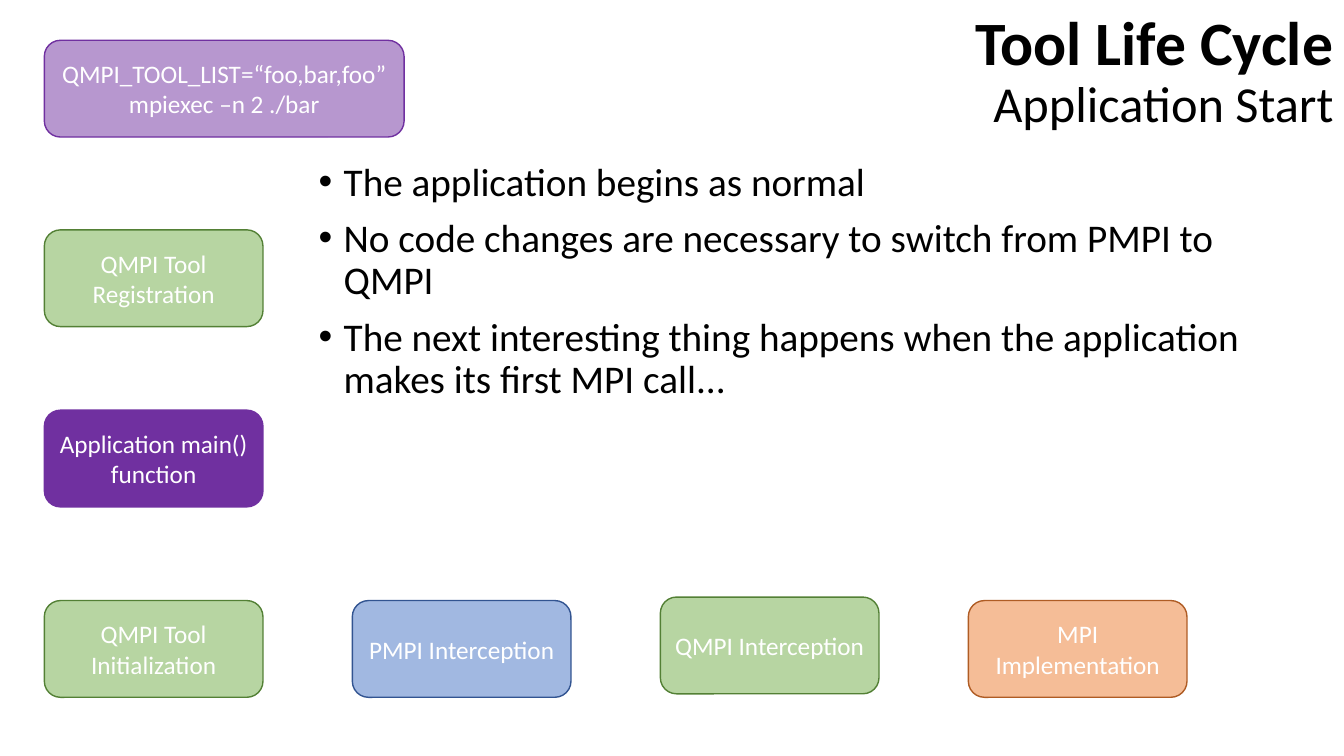
"""Build the Tool Life Cycle slide about application start."""
import pptx
import pptx.dml.color
import pptx.enum.shapes
import pptx.enum.text
import pptx.oxml
import pptx.oxml.ns
import pptx.util

Pt = pptx.util.Pt
FONT = "Calibri"
COLORS = {
    "text": "000000", "label": "FFFFFF",
    "purple": "7030A0", "purple_line": "7030A0",
    "green": "70AD47", "green_line": "538035",
    "blue": "4472C4", "blue_line": "325491",
    "orange": "ED7D31", "orange_line": "AF5C24",
}
TITLE = [("Tool Life Cycle", 44, True), ("Application Start", 36, False)]
BULLETS = [
    "The application begins as normal",
    "No code changes are necessary to switch from PMPI to QMPI",
    "The next interesting thing happens when the application makes its first MPI call...",
]
LEFT, COLUMN_STEP = 31.7, 220
BOX_W, COMMAND_W, BOX_H = 156.2, 257, 69.1
STAGES = [
    ("QMPI_TOOL_LIST=“foo,bar,foo” mpiexec –n 2 ./bar", 0, 28.8, COMMAND_W, "purple", 50),
    ("QMPI Tool Registration", 0, 164.2, BOX_W, "green", 50),
    ("Application main() function", 0, 293, BOX_W, "purple", 100),
    ("QMPI Tool Initialization", 0, 429, BOX_W, "green", 50),
    ("PMPI Interception", 1, 429, BOX_W, "blue", 50),
    ("QMPI Interception", 2, 426.5, BOX_W, "green", 50),
    ("MPI Implementation", 3, 429, BOX_W, "orange", 50),
]


def rgb(name):
    """Return the named colour."""
    return pptx.dml.color.RGBColor.from_string(COLORS[name])


def add_run(p, text, size, color, bold=False):
    """Append a formatted run to a paragraph."""
    r = p.add_run()
    r.text = text
    r.font.name, r.font.size, r.font.bold = FONT, Pt(size), bold
    r.font.color.rgb = rgb(color)


def place(sp, left, top, width, height, anchor):
    """Position a placeholder and return its text frame."""
    sp.left, sp.top, sp.width, sp.height = map(Pt, (left, top, width, height))
    tf = sp.text_frame
    tf.word_wrap = True
    tf.auto_size = pptx.enum.text.MSO_AUTO_SIZE.NONE
    tf.vertical_anchor = anchor
    return tf


def add_title(slide):
    """Fill the title placeholder."""
    tf = place(slide.shapes.title, 131.8, 0, 828, 104.4, pptx.enum.text.MSO_ANCHOR.MIDDLE)
    p = tf.paragraphs[0]
    p.alignment = pptx.enum.text.PP_ALIGN.RIGHT
    p.line_spacing = 0.9
    for i, (text, size, bold) in enumerate(TITLE):
        if i:
            p.add_line_break()
        add_run(p, text, size, "text", bold)


def add_bullets(slide):
    """Fill the body placeholder with bullets."""
    tf = place(slide.placeholders[1], 220.3, 112.3, 722.9, 311.8, pptx.enum.text.MSO_ANCHOR.TOP)
    for i, text in enumerate(BULLETS):
        p = tf.add_paragraph() if i else tf.paragraphs[0]
        p.line_spacing, p.space_before = 0.9, Pt(10)
        pPr = p._p.get_or_add_pPr()
        pPr.set("marL", str(Pt(18)))
        pPr.set("indent", str(-Pt(18)))
        for tag, key, value in (("a:buFont", "typeface", "Arial"), ("a:buChar", "char", "•")):
            bullet = pptx.oxml.parse_xml(f'<{tag} {pptx.oxml.ns.nsdecls("a")} {key}="{value}"/>')
            pPr.append(bullet)
        add_run(p, text, 28, "text")


def add_stage(slide, text, column, top, width, color, opacity):
    """Add one rounded stage box."""
    sp = slide.shapes.add_shape(
        pptx.enum.shapes.MSO_SHAPE.ROUNDED_RECTANGLE,
        Pt(LEFT + column * COLUMN_STEP), Pt(top), Pt(width), Pt(BOX_H))
    sp.shadow.inherit = False
    sp.fill.solid()
    sp.fill.fore_color.rgb = rgb(color)
    if opacity < 100:
        srgb = sp._element.spPr.find(".//" + pptx.oxml.ns.qn("a:srgbClr"))
        srgb.append(pptx.oxml.parse_xml(
            f'<a:alpha {pptx.oxml.ns.nsdecls("a")} val="{opacity * 1000}"/>'))
    sp.line.color.rgb = rgb(color + "_line")
    sp.line.width = Pt(1)
    tf = sp.text_frame
    tf.word_wrap = True
    tf.vertical_anchor = pptx.enum.text.MSO_ANCHOR.MIDDLE
    p = tf.paragraphs[0]
    p.alignment = pptx.enum.text.PP_ALIGN.CENTER
    add_run(p, text, 18, "label")


def main():
    """Build and save the presentation."""
    prs = pptx.Presentation()
    prs.slide_width, prs.slide_height = Pt(960), Pt(540)
    slide = prs.slides.add_slide(prs.slide_layouts[1])
    add_title(slide)
    add_bullets(slide)
    for stage in STAGES:
        add_stage(slide, *stage)
    prs.save("out.pptx")


if __name__ == "__main__":
    main()
